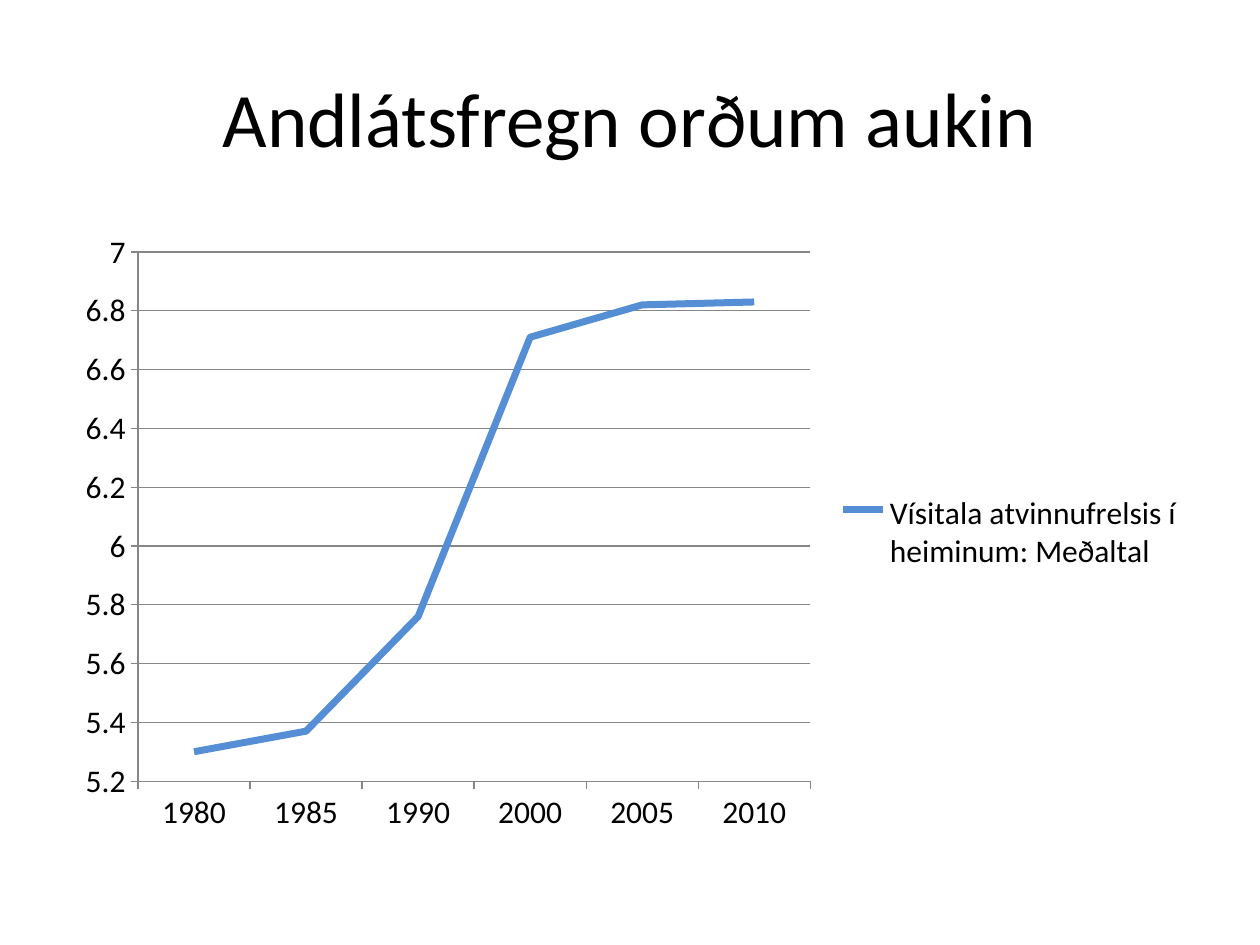
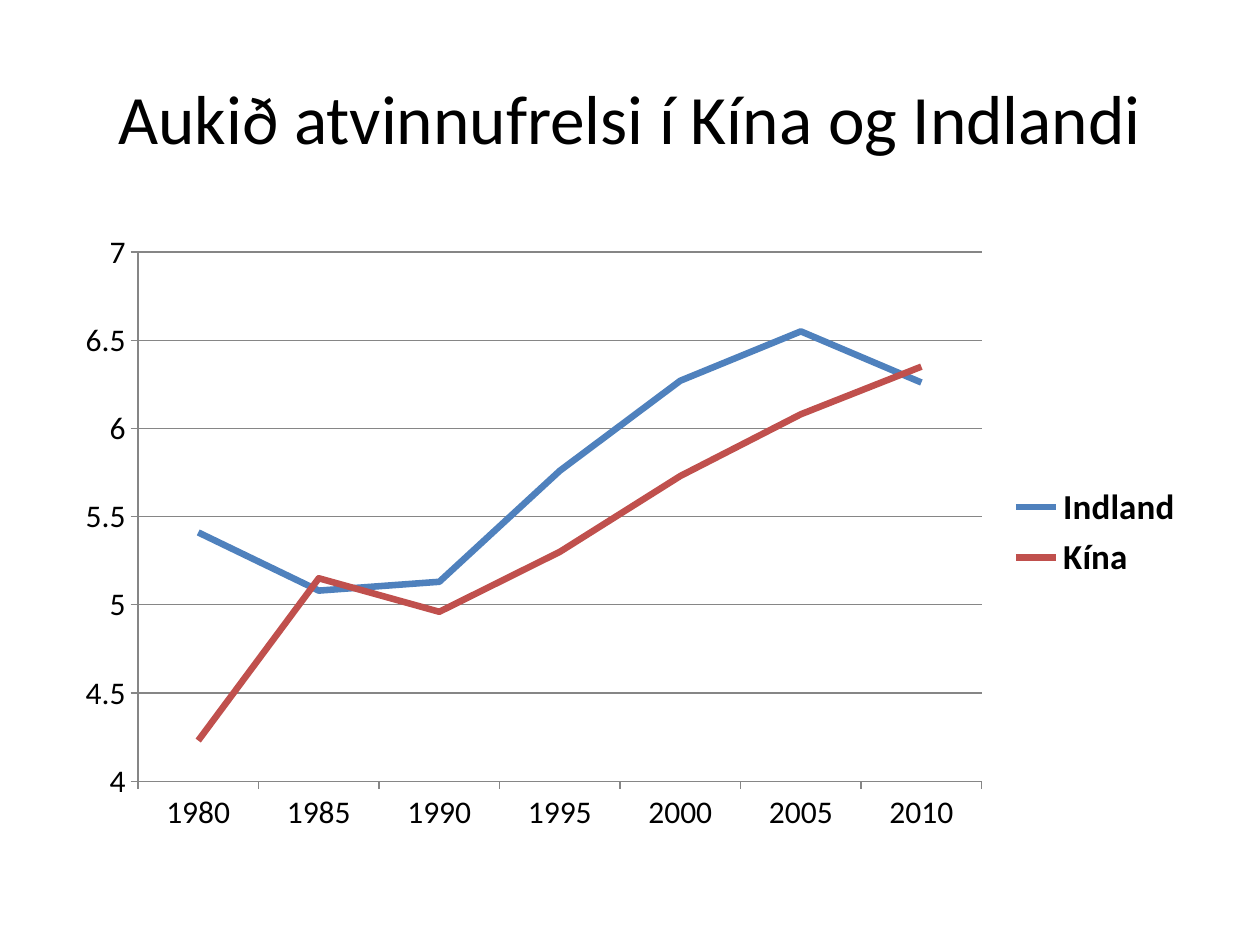
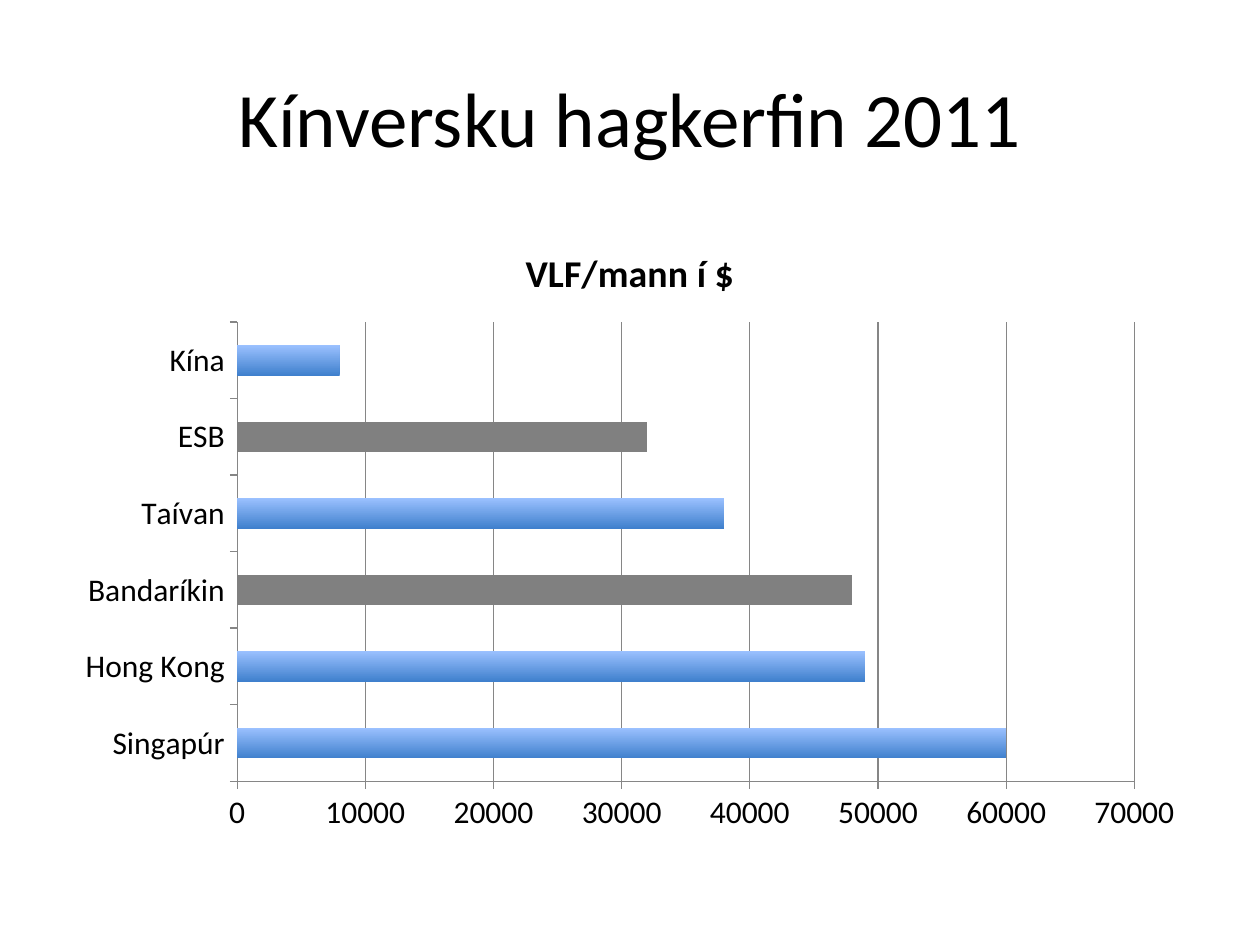
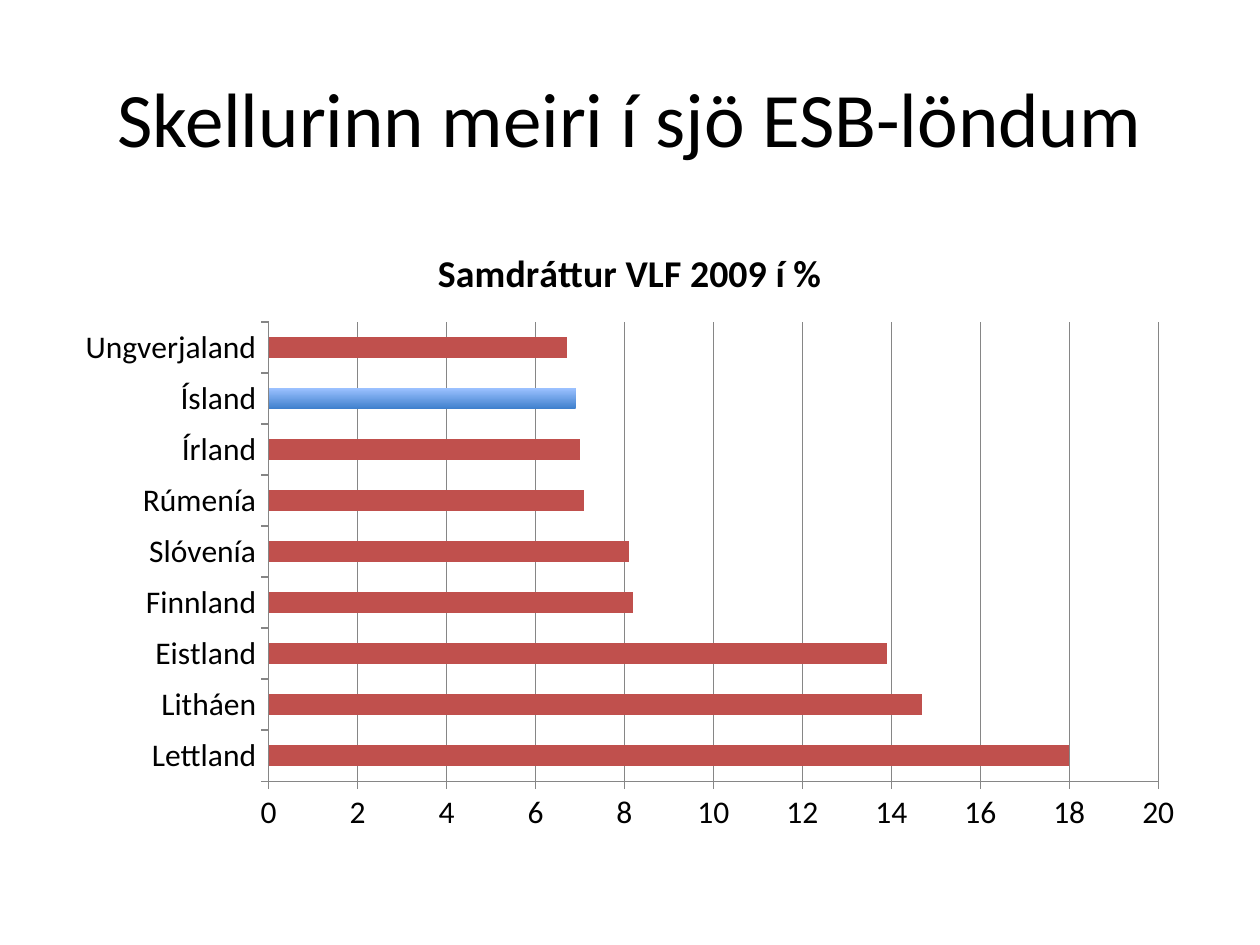
"""Build four slides on economic freedom and GDP, each with a title and one chart."""
import pptx
import pptx.chart.data
import pptx.dml.color
import pptx.enum.chart
import pptx.enum.text
import pptx.util

PX = 9144
FONT = "Calibri"
COLORS = {
    "text": "000000",
    "axis": "868686",
    "sky": "558ED5",
    "blue": "4F81BD",
    "red": "C0504D",
    "gray": "808080",
    "glow_low": "3F80CD",
    "glow_high": "9BC1FF",
}
TITLE_BOX = (50, 30, 900, 125)
CHART_BOX = (50, 175, 900, 495)
LINE = pptx.enum.chart.XL_CHART_TYPE.LINE
BAR = pptx.enum.chart.XL_CHART_TYPE.BAR_CLUSTERED


def rgb(name):
    return pptx.dml.color.RGBColor.from_string(COLORS[name])


def write(frame, text, size=44, bold=False):
    frame.text = text
    paragraph = frame.paragraphs[0]
    paragraph.alignment = pptx.enum.text.PP_ALIGN.CENTER
    font = paragraph.runs[0].font
    font.name, font.size, font.bold = FONT, pptx.util.Pt(size), bold
    font.color.rgb = rgb("text")


topics = [
    {
        "title": "Andlátsfregn orðum aukin",
        "kind": LINE,
        "scale": (5.2, 7, 0.2),
        "categories": [1980, 1985, 1990, 2000, 2005, 2010],
        "series": [("Vísitala atvinnufrelsis í heiminum: Meðaltal", "sky",
                    [5.3, 5.37, 5.76, 6.71, 6.82, 6.83])],
        "line_width": 4,
    },
    {
        "title": "Aukið atvinnufrelsi í Kína og Indlandi",
        "title_size": 39.6,
        "kind": LINE,
        "scale": (4, 7, 0.5),
        "categories": [1980, 1985, 1990, 1995, 2000, 2005, 2010],
        "series": [("Indland", "blue", [5.41, 5.08, 5.13, 5.76, 6.27, 6.55, 6.26]),
                   ("Kína", "red", [4.23, 5.15, 4.96, 5.3, 5.73, 6.08, 6.35])],
        "line_width": 3.75,
        "legend_size": 20,
        "legend_bold": True,
    },
    {
        "title": "Kínversku hagkerfin 2011",
        "kind": BAR,
        "heading": "VLF/mann í $",
        "scale": (0, 70000, 10000),
        "categories": ["Singapúr", "Hong Kong", "Bandaríkin", "Taívan", "ESB", "Kína"],
        "series": [("VLF/mann í $", "glow", [60000, 49000, 48000, 38000, 32000, 8000])],
        "highlights": {2: "gray", 4: "gray"},
    },
    {
        "title": "Skellurinn meiri í sjö ESB-löndum",
        "kind": BAR,
        "heading": "Samdráttur VLF 2009 í %",
        "scale": (0, 20, 2),
        "categories": ["Lettland", "Litháen", "Eistland", "Finnland", "Slóvenía",
                       "Rúmenía", "Írland", "Ísland", "Ungverjaland"],
        "series": [("Series 1", "red", [18, 14.7, 13.9, 8.2, 8.1, 7.1, 7, 6.9, 6.7])],
        "highlights": {7: "glow"},
    },
]

deck = pptx.Presentation()
deck.slide_width, deck.slide_height = 1000 * PX, 750 * PX

for topic in topics:
    slide = deck.slides.add_slide(deck.slide_layouts[5])
    title = slide.shapes.title
    title.left, title.top, title.width, title.height = [n * PX for n in TITLE_BOX]
    title.text_frame.auto_size = pptx.enum.text.MSO_AUTO_SIZE.NONE
    title.text_frame.vertical_anchor = pptx.enum.text.MSO_ANCHOR.MIDDLE
    write(title.text_frame, topic["title"], size=topic.get("title_size", 44))

    figures = pptx.chart.data.CategoryChartData()
    figures.categories = topic["categories"]
    for name, _, values in topic["series"]:
        figures.add_series(name, values)
    chart = slide.shapes.add_chart(
        topic["kind"], *[n * PX for n in CHART_BOX], figures).chart
    chart.font.name, chart.font.size = FONT, pptx.util.Pt(18)
    chart.font.color.rgb = rgb("text")

    value_axis = chart.value_axis
    value_axis.minimum_scale, value_axis.maximum_scale, value_axis.major_unit = topic["scale"]
    value_axis.has_major_gridlines = True
    for axis in (chart.category_axis, value_axis):
        axis.major_tick_mark = pptx.enum.chart.XL_TICK_MARK.OUTSIDE
        axis.minor_tick_mark = pptx.enum.chart.XL_TICK_MARK.NONE
    for rule in (chart.category_axis.format.line, value_axis.format.line,
                 value_axis.major_gridlines.format.line):
        rule.color.rgb = rgb("axis")
        rule.width = pptx.util.Pt(0.75)

    plot = chart.plots[0]
    plot.vary_by_categories = False
    if topic["kind"] == LINE:
        chart.has_title = False
        chart.has_legend = True
        chart.legend.position = pptx.enum.chart.XL_LEGEND_POSITION.RIGHT
        chart.legend.include_in_layout = False
        legend_font = chart.legend.font
        legend_font.name = FONT
        legend_font.size = pptx.util.Pt(topic.get("legend_size", 18))
        legend_font.bold = topic.get("legend_bold", False)
        legend_font.color.rgb = rgb("text")
        for series, (_, color, _) in zip(plot.series, topic["series"]):
            series.smooth = False
            series.format.line.color.rgb = rgb(color)
            series.format.line.width = pptx.util.Pt(topic["line_width"])
    else:
        chart.has_legend = False
        chart.has_title = True
        write(chart.chart_title.text_frame, topic["heading"], size=21.6, bold=True)
        chart.chart_title.include_in_layout = False
        plot.gap_width = 150
        bars = plot.series[0]
        bars.invert_if_negative = False
        paints = [(bars.format.fill, topic["series"][0][1])]
        paints += [(bars.points[index].format.fill, color)
                   for index, color in topic["highlights"].items()]
        for fill, color in paints:
            if color == "glow":
                fill.gradient()
                fill.gradient_angle = 90
                for stop, shade in zip(fill.gradient_stops, ("glow_low", "glow_high")):
                    stop.color.rgb = rgb(shade)
            else:
                fill.solid()
                fill.fore_color.rgb = rgb(color)

deck.save("out.pptx")
